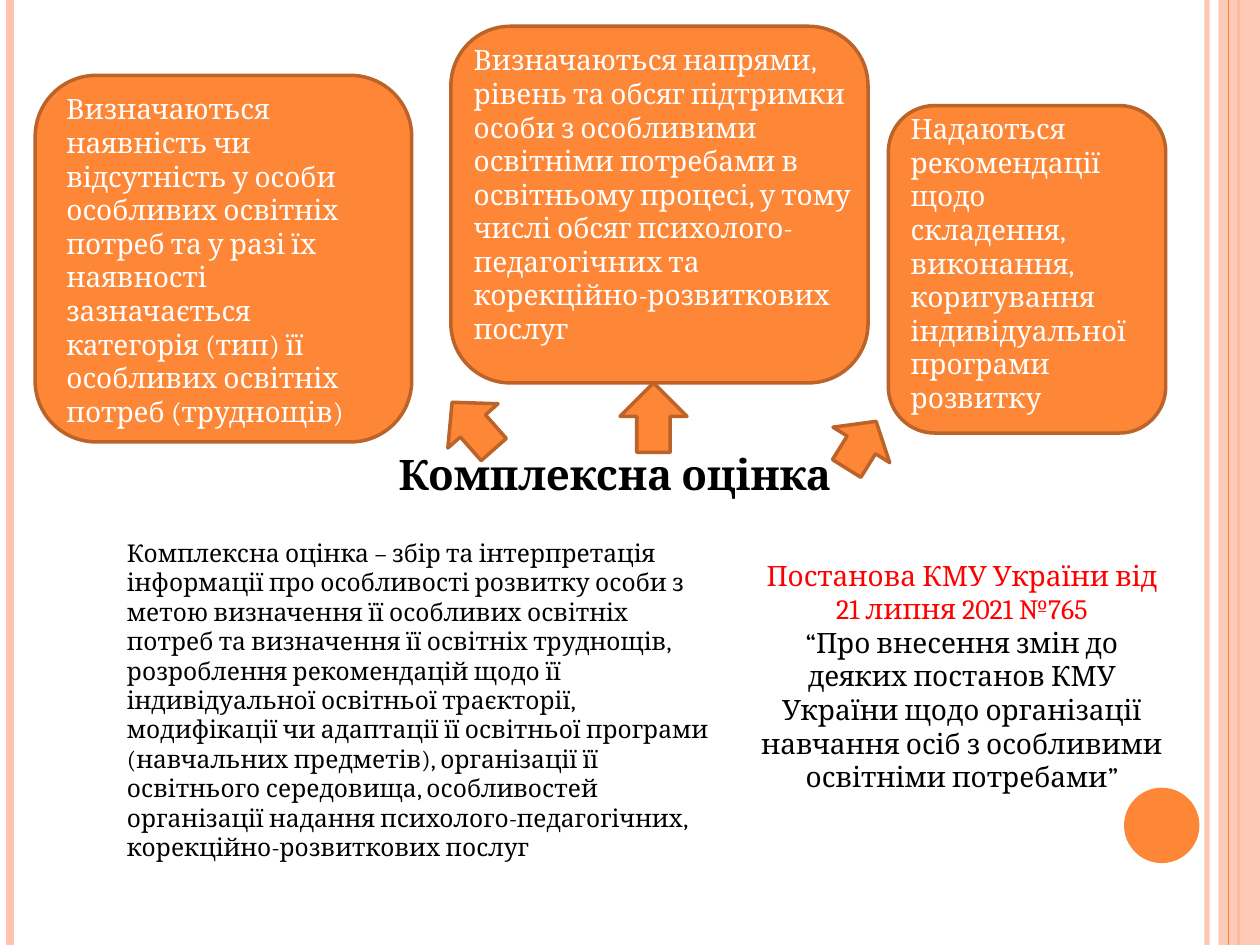
"""Build the slide on what a complex assessment determines."""
from dataclasses import dataclass

from lxml.etree import SubElement
from pptx import Presentation
from pptx.dml.color import RGBColor
from pptx.enum.shapes import MSO_CONNECTOR, MSO_SHAPE
from pptx.enum.text import MSO_AUTO_SIZE, PP_ALIGN
from pptx.oxml.ns import qn
from pptx.shapes.autoshape import Shape
from pptx.shapes.base import BaseShape
from pptx.shapes.shapetree import SlideShapes
from pptx.util import Cm, Pt


@dataclass(frozen=True)
class Theme:
    font: str = "Cambria"
    orange: str = "FE8637"
    edge: str = "BC6329"
    peach: str = "FEC3AE"
    black: str = "000000"
    white: str = "FFFFFF"
    red: str = "FF0000"
    title: int = 24
    body: int = 16
    small: int = 14
    border: int = 2


@dataclass(frozen=True)
class Box:
    left: float
    top: float
    width: float
    height: float

    def lengths(self) -> tuple[Cm, Cm, Cm, Cm]:
        return Cm(self.left), Cm(self.top), Cm(self.width), Cm(self.height)


@dataclass(frozen=True)
class Rule:
    left: float
    color: str
    weight: float
    alpha: int = 100


@dataclass(frozen=True)
class Arrow:
    box: Box
    turn: float = 0


@dataclass(frozen=True)
class Para:
    text: str
    color: str
    size: int
    bold: bool = False


@dataclass(frozen=True)
class Note:
    box: Box
    paras: tuple[Para, ...]
    align: PP_ALIGN = PP_ALIGN.LEFT


THEME = Theme()
WIDTH, HEIGHT = 25.4, 19.05

BAND = Box(24.56, 0, 0.84, HEIGHT)
DISC = Box(22.66, 15.88, 1.52, 1.52)
BACK = (
    Rule(24.33, THEME.peach, 3, 93),
    Rule(0.2, THEME.peach, 4.5),
    Rule(24.97, THEME.orange, 1.5),
)
FRONT = Rule(24.77, THEME.orange, 0.75)

CARDS = (
    Box(17.91, 2.13, 5.59, 6.6),
    Box(9.09, 0.53, 8.41, 7.19),
    Box(0.71, 1.52, 7.59, 7.39),
)
ARROWS = (
    Arrow(Box(8.86, 7.95, 1.35, 1.27), 318.6),
    Arrow(Box(12.5, 7.72, 1.35, 1.4)),
    Arrow(Box(16.69, 8.41, 1.35, 1.12), 32),
)
NOTES = (
    Note(Box(6.3, 8.92, 12.19, 1.27), (
        Para("Комплексна оцінка", THEME.black, THEME.title, True),
    ), PP_ALIGN.CENTER),
    Note(Box(1.09, 1.73, 6.6, 7.09), (
        Para("Визначаються наявність чи відсутність у особи особливих освітніх "
             "потреб та у разі їх наявності зазначається категорія (тип) її "
             "особливих освітніх потреб (труднощів)", THEME.white, THEME.body),
    )),
    Note(Box(9.3, 0.74, 8.41, 5.74), (
        Para("Визначаються напрями, рівень та обсяг підтримки особи з особливими "
             "освітніми потребами в освітньому процесі, у тому числі обсяг "
             "психолого-педагогічних та корекційно-розвиткових послуг",
             THEME.white, THEME.body),
    )),
    Note(Box(18.11, 2.13, 5, 6.4), (
        Para("Надаються рекомендації щодо складення, виконання, коригування "
             "індивідуальної програми розвитку", THEME.white, THEME.body),
    )),
    Note(Box(2.31, 10.72, 12.4, 6.25), (
        Para("Комплексна оцінка – збір та інтерпретація інформації про особливості "
             "розвитку особи з метою визначення її особливих освітніх потреб та "
             "визначення її освітніх труднощів, розроблення рекомендацій щодо її "
             "індивідуальної освітньої траєкторії, модифікації чи адаптації її "
             "освітньої програми (навчальних предметів), організації її освітнього "
             "середовища, особливостей організації надання "
             "психолого-педагогічних, корекційно-розвиткових послуг",
             THEME.black, THEME.small),
    )),
    Note(Box(15.09, 11.13, 8.61, 5.74), (
        Para("Постанова КМУ України від 21 липня 2021 №765", THEME.red, THEME.body),
        Para("“Про внесення змін до деяких постанов КМУ України щодо організації "
             "навчання осіб з особливими освітніми потребами”",
             THEME.black, THEME.body),
    ), PP_ALIGN.CENTER),
)


def fade(shape: BaseShape, alpha: int) -> None:
    for color in shape.element.spPr.iter(qn("a:srgbClr")):
        SubElement(color, qn("a:alpha"), val=str(alpha * 1000))


def draw_rule(shapes: SlideShapes, rule: Rule) -> None:
    left = Cm(rule.left)
    line = shapes.add_connector(MSO_CONNECTOR.STRAIGHT, left, 0, left, Cm(HEIGHT))
    line.line.color.rgb = RGBColor.from_string(rule.color)
    line.line.width = Pt(rule.weight)
    if rule.alpha < 100:
        fade(line, rule.alpha)
    SubElement(line.element.spPr, qn("a:effectLst"))


def draw_shape(shapes: SlideShapes, kind: MSO_SHAPE, box: Box,
               color: str = THEME.orange, edge: bool = True) -> Shape:
    shape = shapes.add_shape(kind, *box.lengths())
    shape.shadow.inherit = False
    shape.fill.solid()
    shape.fill.fore_color.rgb = RGBColor.from_string(color)
    if edge:
        shape.line.color.rgb = RGBColor.from_string(THEME.edge)
        shape.line.width = Pt(THEME.border)
    else:
        shape.line.fill.background()
    return shape


def draw_note(shapes: SlideShapes, note: Note) -> None:
    frame = shapes.add_textbox(*note.box.lengths()).text_frame
    frame.word_wrap = True
    frame.auto_size = MSO_AUTO_SIZE.SHAPE_TO_FIT_TEXT
    for index, para in enumerate(note.paras):
        line = frame.add_paragraph() if index else frame.paragraphs[0]
        line.text = para.text
        line.alignment = note.align
        line.font.name = THEME.font
        line.font.size = Pt(para.size)
        line.font.bold = para.bold
        line.font.color.rgb = RGBColor.from_string(para.color)


def main() -> None:
    deck = Presentation()
    deck.slide_width, deck.slide_height = Cm(WIDTH), Cm(HEIGHT)
    shapes = deck.slides.add_slide(deck.slide_layouts[6]).shapes
    for rule in BACK:
        draw_rule(shapes, rule)
    fade(draw_shape(shapes, MSO_SHAPE.RECTANGLE, BAND, THEME.peach, False), 87)
    draw_rule(shapes, FRONT)
    draw_shape(shapes, MSO_SHAPE.OVAL, DISC, edge=False)
    for card in CARDS:
        draw_shape(shapes, MSO_SHAPE.ROUNDED_RECTANGLE, card)
    for arrow in ARROWS:
        draw_shape(shapes, MSO_SHAPE.UP_ARROW, arrow.box).rotation = arrow.turn
    for note in NOTES:
        draw_note(shapes, note)
    deck.save("out.pptx")


if __name__ == "__main__":
    main()
